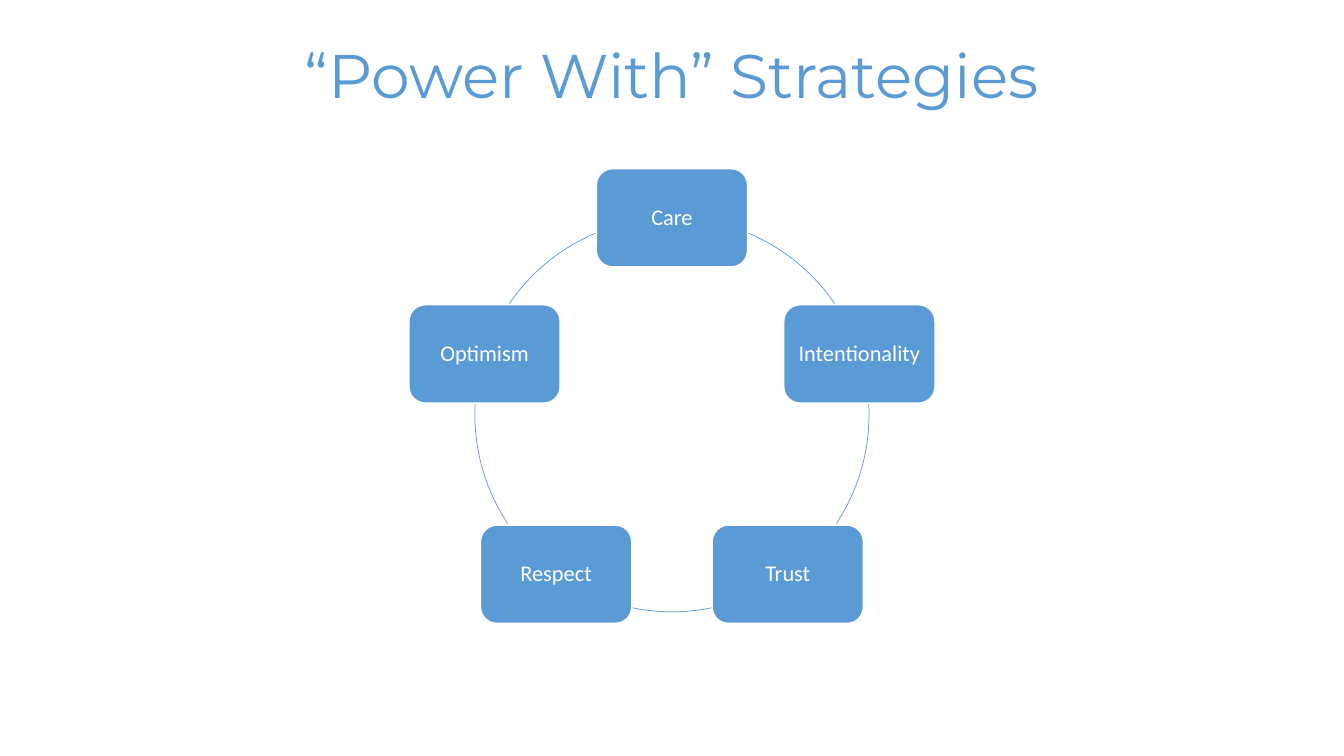
from math import cos, radians, sin

from pptx import Presentation
from pptx.dml.color import RGBColor
from pptx.enum.shapes import MSO_SHAPE
from pptx.enum.text import MSO_ANCHOR, PP_ALIGN
from pptx.util import Pt

BLUE = RGBColor(0x5B, 0x9B, 0xD5)
WHITE = RGBColor(0xFF, 0xFF, 0xFF)

CENTER_X, CENTER_Y, RADIUS = 480, 296.3, 140.75
BOX_WIDTH, BOX_HEIGHT = 108, 70.2

STRATEGIES = ["Care", "Intentionality", "Trust", "Respect", "Optimism"]
ARCS = [(292.9, 325.6), (356.9, 33.5), (78.4, 101.6), (146.5, 183.1), (214.4, 247.1)]

deck = Presentation()
deck.slide_width, deck.slide_height = Pt(960), Pt(540)
page = deck.slides.add_slide(deck.slide_layouts[6])

title = page.shapes.add_textbox(Pt(66), Pt(28.75), Pt(828), Pt(104.4))
title.text_frame.word_wrap = True
para = title.text_frame.paragraphs[0]
para.text = "“Power With” Strategies"
para.alignment = PP_ALIGN.CENTER
para.line_spacing = 0.9
para.font.name = "Montserrat"
para.font.size = Pt(44)
para.font.color.rgb = BLUE

for index, (strategy, (start, end)) in enumerate(zip(STRATEGIES, ARCS)):
    angle = radians(index * 360 / len(STRATEGIES) - 90)
    left = CENTER_X + RADIUS * cos(angle) - BOX_WIDTH / 2
    top = CENTER_Y + RADIUS * sin(angle) - BOX_HEIGHT / 2
    box = page.shapes.add_shape(
        MSO_SHAPE.ROUNDED_RECTANGLE, Pt(left), Pt(top), Pt(BOX_WIDTH), Pt(BOX_HEIGHT)
    )
    box.shadow.inherit = False
    box.fill.solid()
    box.fill.fore_color.rgb = BLUE
    box.line.color.rgb = WHITE
    box.line.width = Pt(1)
    frame = box.text_frame
    frame.word_wrap = True
    frame.vertical_anchor = MSO_ANCHOR.MIDDLE
    frame.margin_left = frame.margin_right = Pt(5)
    frame.margin_top = frame.margin_bottom = Pt(5)
    para = frame.paragraphs[0]
    para.text = strategy
    para.alignment = PP_ALIGN.CENTER
    para.line_spacing = 0.9
    para.font.name = "Calibri"
    para.font.size = Pt(16)
    para.font.color.rgb = WHITE

    arc = page.shapes.add_shape(
        MSO_SHAPE.ARC,
        Pt(CENTER_X - RADIUS), Pt(CENTER_Y - RADIUS), Pt(2 * RADIUS), Pt(2 * RADIUS),
    )
    arc.adjustments[0] = start * 0.6
    arc.adjustments[1] = end * 0.6
    arc.shadow.inherit = False
    arc.fill.background()
    arc.line.color.rgb = BLUE
    arc.line.width = Pt(0.5)

deck.save("out.pptx")
